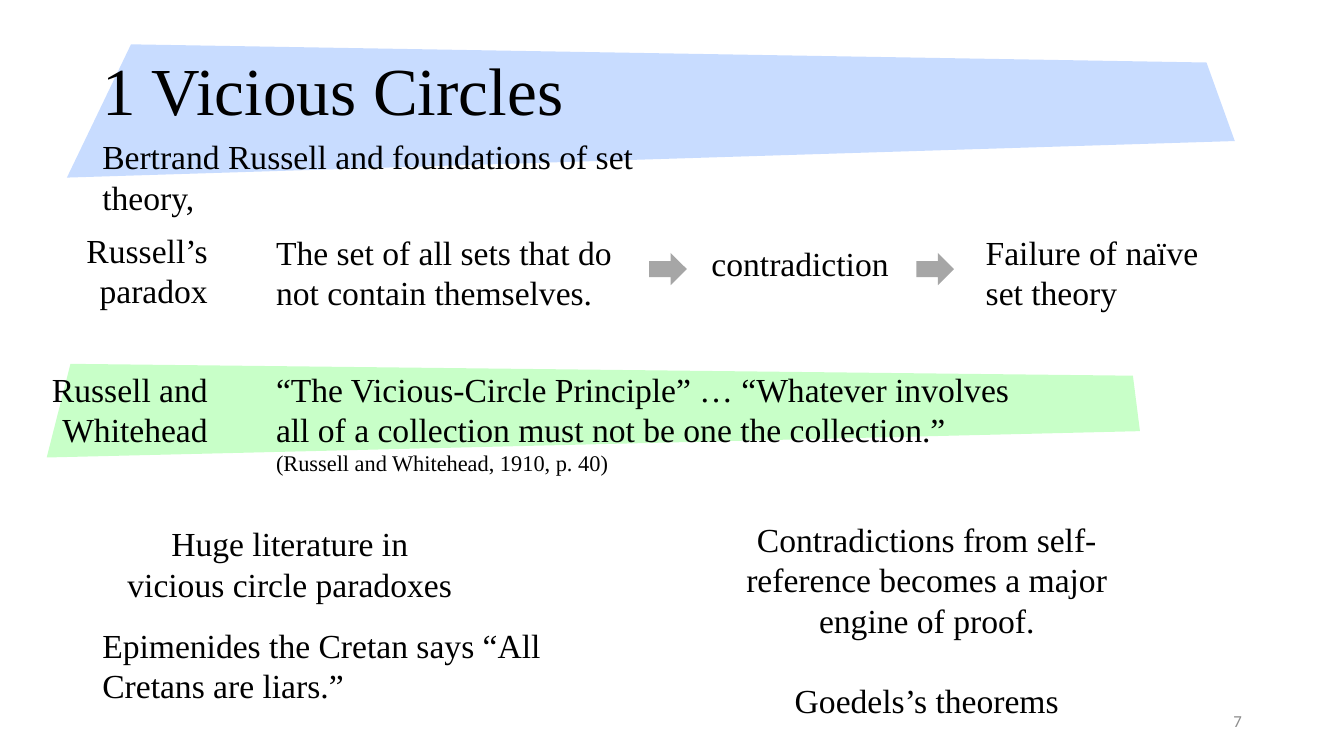
"""Build the slide on vicious circles and Russell's paradox."""
import pptx
import pptx.util
import pptx.dml.color
import pptx.enum.shapes
import pptx.enum.text
from dataclasses import dataclass

Pt = pptx.util.Pt
ALIGN = pptx.enum.text.PP_ALIGN
ANCHOR = pptx.enum.text.MSO_ANCHOR


@dataclass(frozen=True)
class Theme:
    serif: str = "Times New Roman"
    sans: str = "Calibri"
    ink: str = "000000"
    muted: str = "8C8C8C"
    arrow: str = "A6A6A6"
    title_band: str = "C8DCFF"
    principle_band: str = "C8FFC8"
    title_size: int = 48
    body_size: int = 24
    citation_size: int = 16
    number_size: int = 12


THEME = Theme()
SLIDE_SIZE = (960, 540)
MARGIN, LABEL_LEFT, QUOTE_LEFT, RIGHT_LEFT = 66, 12.2, 190.1, 501.1
LABEL_WIDTH, TWO_LINES = 143.3, 65.4
PARADOX_TOP, PRINCIPLE_TOP = 162, 259.9

TITLE = "1 Vicious Circles"
TITLE_BOX = (MARGIN, 28.75, 612, 76.3)
TITLE_BAND = [(93.6, 31.7), (861.8, 44.7), (889, 100.8), (47.8, 126.9)]
TITLE_BAND = [(x if x < 880 else 882, y) for x, y in TITLE_BAND]
PRINCIPLE_BAND = [(50.4, 259.9), (809.3, 268.4), (814.3, 308), (33.4, 326.8)]

TEXTS = [
    ((MARGIN, 93.7, 460, 36.3), ALIGN.LEFT,
     ["Bertrand Russell and foundations of set theory,"]),
    ((LABEL_LEFT, 160.4, LABEL_WIDTH, TWO_LINES), ALIGN.RIGHT, ["Russell’s paradox"]),
    ((QUOTE_LEFT, PARADOX_TOP, 269.3, TWO_LINES), ALIGN.LEFT,
     ["The set of all sets that do not contain themselves."]),
    ((RIGHT_LEFT, 170, 142, 36.3), ALIGN.LEFT, ["contradiction"]),
    ((697, PARADOX_TOP, 197.3, TWO_LINES), ALIGN.LEFT, ["Failure of naïve set theory"]),
    ((LABEL_LEFT, PRINCIPLE_TOP, LABEL_WIDTH, TWO_LINES), ALIGN.RIGHT,
     ["Russell and Whitehead"]),
    ((78.5, 370.1, 257, TWO_LINES), ALIGN.CENTER,
     ["Huge literature in vicious circle paradoxes"]),
    ((MARGIN, 442.8, 329.8, TWO_LINES), ALIGN.LEFT,
     ["Epimenides the Cretan says “All Cretans are liars.”"]),
    ((RIGHT_LEFT, 367.2, 321.8, 152.6), ALIGN.CENTER,
     ["Contradictions from self-reference becomes a major engine of proof.",
      "Goedels’s theorems"]),
]
PARAGRAPH_GAP = 28.8
QUOTE_BOX = (QUOTE_LEFT, PRINCIPLE_TOP, 547.2, 85)
QUOTE = ("“The Vicious-Circle Principle” … “Whatever involves all of a collection "
         "must not be one the collection.” ")
CITATION = "(Russell and Whitehead, 1910, p. 40)"
ARROW_LEFTS, ARROW_TOP, ARROW_SIZE = (463.7, 654.5), 180.7, (26.9, 23)
NUMBER, NUMBER_BOX = "7", (843.1, 500.4, 51.1, 28.8)


def lengths(box):
    return [Pt(value) for value in box]


def paint(shape, color):
    shape.shadow.inherit = False
    shape.fill.solid()
    shape.fill.fore_color.rgb = pptx.dml.color.RGBColor.from_string(color)
    shape.line.fill.background()


def style(run, size=THEME.body_size, font=THEME.serif, color=THEME.ink):
    run.font.size = Pt(size)
    run.font.name = font
    run.font.color.rgb = pptx.dml.color.RGBColor.from_string(color)


def add_band(slide, corners, color):
    points = [lengths(corner) for corner in corners]
    builder = slide.shapes.build_freeform(*points[0], scale=1.0)
    builder.add_line_segments(points[1:], close=True)
    band = builder.convert_to_shape()
    paint(band, color)
    return band


def add_text(slide, box, alignment, texts, **look):
    text_frame = slide.shapes.add_textbox(*lengths(box)).text_frame
    text_frame.word_wrap = True
    text_frame.text = "\n".join(texts)
    for index, paragraph in enumerate(text_frame.paragraphs):
        paragraph.alignment = alignment
        if index:
            paragraph.space_before = Pt(PARAGRAPH_GAP)
        for run in paragraph.runs:
            style(run, **look)
    return text_frame


def add_title(slide):
    title = slide.shapes.title
    title.left, title.top, title.width, title.height = lengths(TITLE_BOX)
    text_frame = title.text_frame
    text_frame.text = TITLE
    text_frame.auto_size = pptx.enum.text.MSO_AUTO_SIZE.NONE
    text_frame.vertical_anchor = ANCHOR.MIDDLE
    paragraph = text_frame.paragraphs[0]
    paragraph.alignment = ALIGN.LEFT
    paragraph.line_spacing = 0.9
    style(paragraph.runs[0], THEME.title_size)
    band = add_band(slide, TITLE_BAND, THEME.title_band)
    title.element.addprevious(band.element)


def main():
    presentation = pptx.Presentation()
    presentation.slide_width, presentation.slide_height = lengths(SLIDE_SIZE)
    slide = presentation.slides.add_slide(presentation.slide_layouts[5])
    add_title(slide)
    add_band(slide, PRINCIPLE_BAND, THEME.principle_band)
    for box, alignment, texts in TEXTS:
        add_text(slide, box, alignment, texts)
    quote = add_text(slide, QUOTE_BOX, ALIGN.LEFT, [QUOTE])
    citation = quote.paragraphs[0].add_run()
    citation.text = CITATION
    style(citation, THEME.citation_size)
    for left in ARROW_LEFTS:
        arrow = slide.shapes.add_shape(
            pptx.enum.shapes.MSO_SHAPE.RIGHT_ARROW,
            *lengths((left, ARROW_TOP, *ARROW_SIZE)))
        paint(arrow, THEME.arrow)
    number = add_text(slide, NUMBER_BOX, ALIGN.RIGHT, [NUMBER],
                      size=THEME.number_size, font=THEME.sans, color=THEME.muted)
    number.vertical_anchor = ANCHOR.MIDDLE
    presentation.save("out.pptx")


if __name__ == "__main__":
    main()
